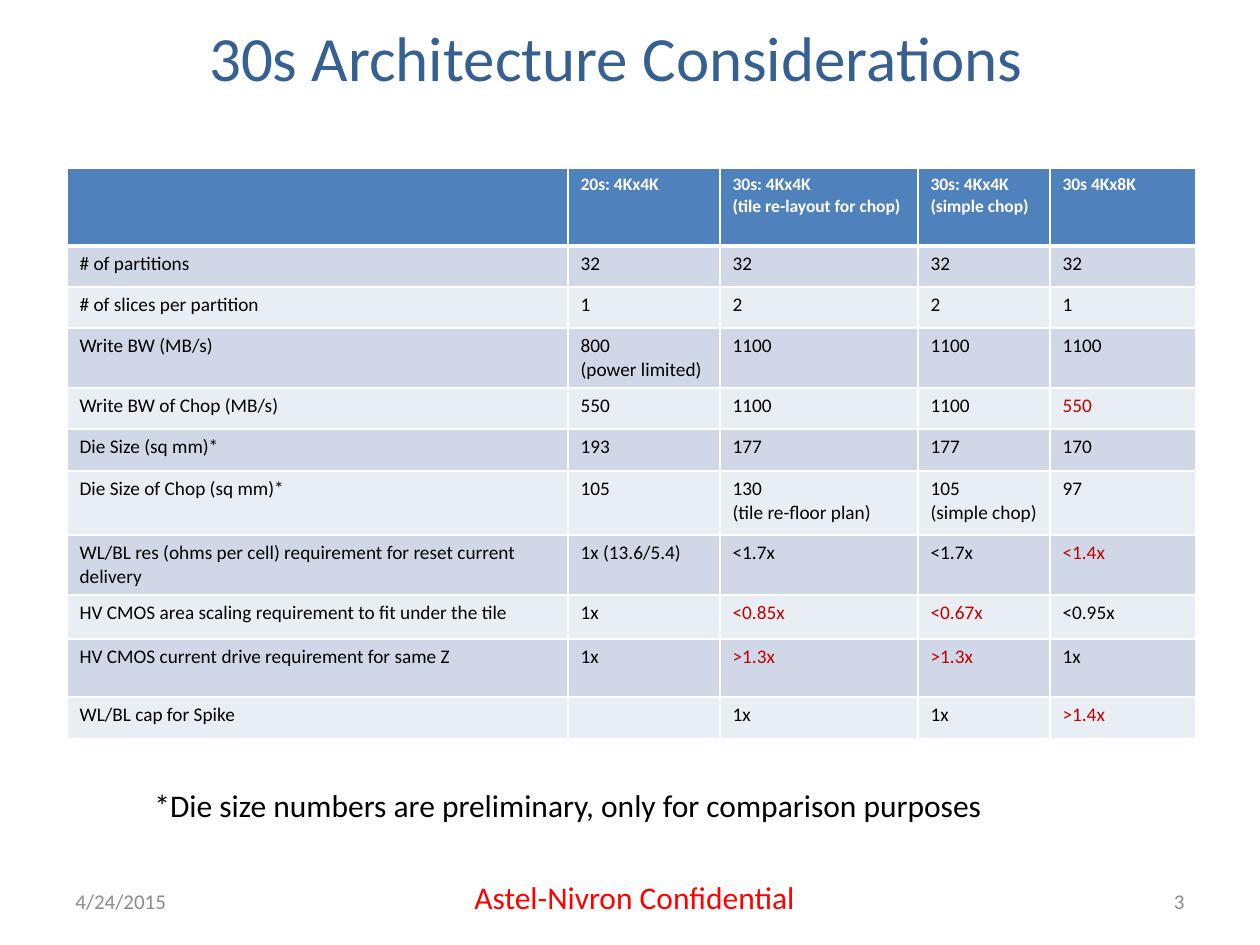
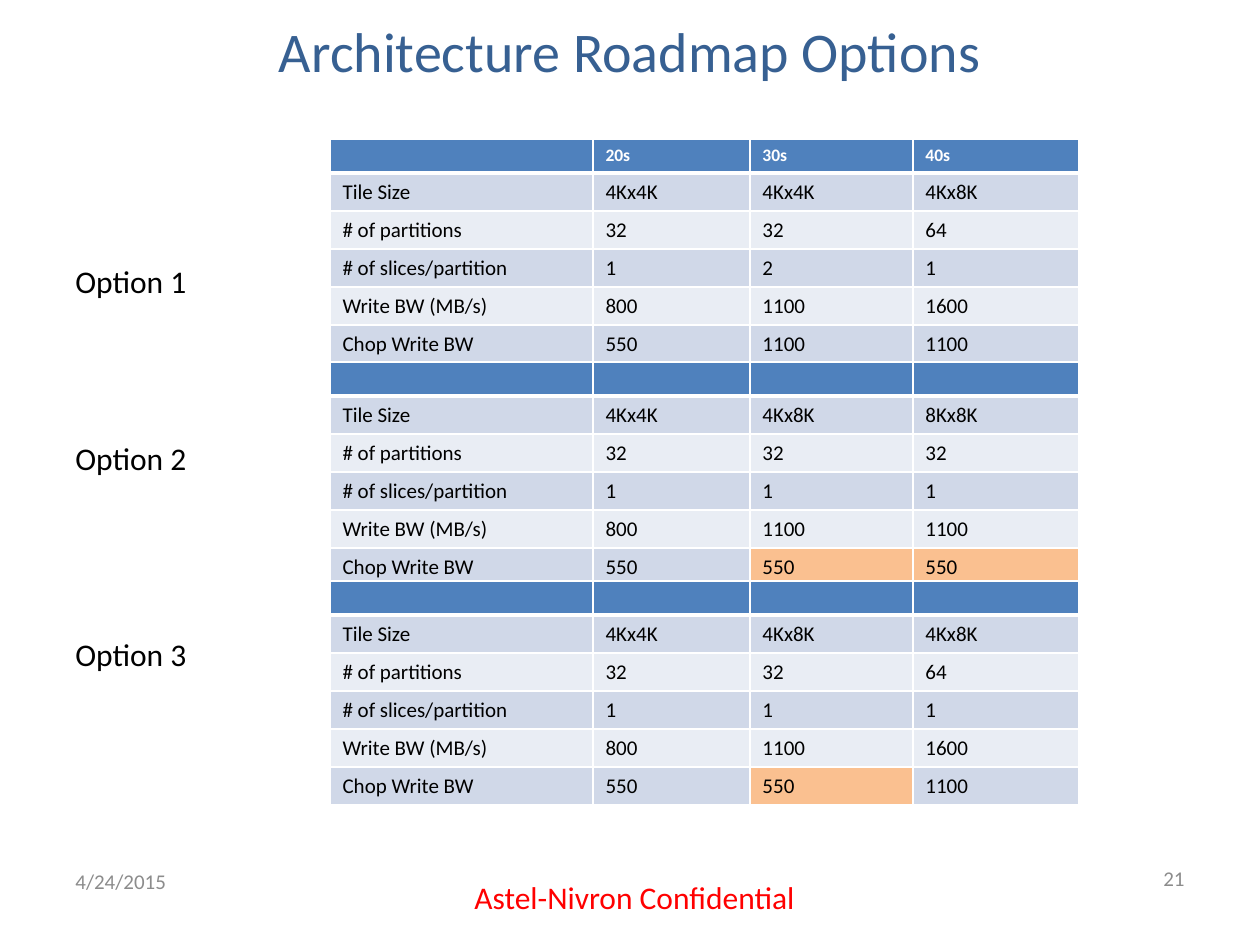
from itertools import product

from lxml.etree import SubElement
from pptx import Presentation
from pptx.dml.color import RGBColor
from pptx.enum.text import MSO_ANCHOR as Anchor, MSO_AUTO_SIZE as AutoSize, PP_ALIGN as Align
from pptx.oxml.ns import qn
from pptx.util import Pt

PX = 914400 // 126
FONT = "Calibri"
TITLE, BLACK, WHITE, GREY = "376092", "000000", "FFFFFF", "8C8C8C"
HEADER, BANDS = "4F81BD", ("E9EDF4", "D0D8E8")
WARNING, HIGHLIGHT, CONFIDENTIAL = "C00000", "FAC090", "FF0000"

CONSIDERATIONS = [
    ("", "20s: 4Kx4K", "30s: 4Kx4K\n(tile re-layout for chop)", "30s: 4Kx4K\n(simple chop)", "30s 4Kx8K"),
    ("# of partitions", "32", "32", "32", "32"),
    ("# of slices per partition", "1", "2", "2", "1"),
    ("Write BW (MB/s)", "800\n(power limited)", "1100", "1100", "1100"),
    ("Write BW of Chop (MB/s)", "550", "1100", "1100", "550"),
    ("Die Size (sq mm)*", "193", "177", "177", "170"),
    ("Die Size of Chop (sq mm)*", "105", "130\n(tile re-floor plan)", "105\n(simple chop)", "97"),
    ("WL/BL res (ohms per cell) requirement for reset current delivery",
     "1x (13.6/5.4)", "<1.7x", "<1.7x", "<1.4x"),
    ("HV CMOS area scaling requirement to fit under the tile", "1x", "<0.85x", "<0.67x", "<0.95x"),
    ("HV CMOS current drive requirement for same Z", "1x", ">1.3x", ">1.3x", "1x"),
    ("WL/BL cap for Spike", "", "1x", "1x", ">1.4x"),
]
CONSIDERATION_WIDTHS = (501, 152, 198, 132, 146)
CONSIDERATION_HEIGHTS = (78, 41, 41, 60, 41, 42, 64, 60, 44, 58, 42)
CONSIDERATION_WARNINGS = {(4, 4), (7, 4), (8, 2), (8, 3), (9, 2), (9, 3), (10, 4)}

ROADMAP_LABELS = ("Tile Size", "# of partitions", "# of slices/partition", "Write BW (MB/s)", "Chop Write BW")
ROADMAP_WIDTHS = (263, 157, 163, 166)
ROADMAP_HEIGHTS = (34,) + (38,) * len(ROADMAP_LABELS)
GENERATION_20S = ("4Kx4K", "32", "1", "800", "550")
GENERATION_4KX8K = ("4Kx8K", "32", "1", "1100", "550")
GENERATION_64 = ("4Kx8K", "64", "1", "1600", "1100")
ROADMAP_OPTIONS = [
    (139, 256, ("", "20s", "30s", "40s"),
     (("4Kx4K", "32", "2", "1100", "1100"), GENERATION_64), set()),
    (362, 433, ("",) * 4,
     (GENERATION_4KX8K, ("8Kx8K", "32", "1", "1100", "550")), {(5, 2), (5, 3)}),
    (581, 629, ("",) * 4, (GENERATION_4KX8K, GENERATION_64), {(5, 2)}),
]


def rgb(value):
    """Turn a hex string into a colour."""
    return RGBColor.from_string(value)


def write(frame, text, size=18, color=BLACK, bold=False, align=Align.LEFT):
    """Fill a text frame, one paragraph per line, in one format."""
    frame.text = text
    for paragraph in frame.paragraphs:
        paragraph.alignment = align
        for run in paragraph.runs:
            run.font.name, run.font.size, run.font.bold = FONT, Pt(size), bold
            run.font.color.rgb = rgb(color)
        if not paragraph.runs:
            SubElement(paragraph._p, qn("a:endParaRPr"), sz=str(size * 100))


def place(shape, left, top, width, height):
    """Position a shape in px."""
    shape.left, shape.top, shape.width, shape.height = (n * PX for n in (left, top, width, height))


def add_label(slide, text, box, wrap=True, anchor=Anchor.TOP, **style):
    """Add a text box."""
    label = slide.shapes.add_textbox(*(n * PX for n in box))
    label.text_frame.word_wrap = wrap
    label.text_frame.vertical_anchor = anchor
    write(label.text_frame, text, **style)


def add_border(cell, side, width):
    """Draw one white edge of a cell."""
    line = SubElement(cell._tc.get_or_add_tcPr(), qn(f"a:ln{side}"), w=str(Pt(width)))
    SubElement(SubElement(line, qn("a:solidFill")), qn("a:srgbClr"), val=WHITE)


def add_grid(slide, rows, left, top, widths, heights, size, warnings=(), highlights=()):
    """Add a banded table with a blue header row."""
    box = (left, top, sum(widths), sum(heights))
    table = slide.shapes.add_table(len(rows), len(widths), *(n * PX for n in box)).table
    for column, width in zip(table.columns, widths):
        column.width = width * PX
    for row, height in zip(table.rows, heights):
        row.height = height * PX
    for r, c in product(range(len(rows)), range(len(widths))):
        cell = table.cell(r, c)
        for side in "LRTB":
            under_header = (r, side) in ((0, "B"), (1, "T"))
            add_border(cell, side, 3 if under_header else 1)
        cell.fill.solid()
        if r == 0:
            cell.fill.fore_color.rgb = rgb(HEADER)
            write(cell.text_frame, rows[r][c], size=10, color=WHITE, bold=True)
        else:
            cell.fill.fore_color.rgb = rgb(HIGHLIGHT if (r, c) in highlights else BANDS[r % 2])
            write(cell.text_frame, rows[r][c], size=size, color=WARNING if (r, c) in warnings else BLACK)


def add_page(deck, title, title_box, title_size, number, date_top, number_top):
    """Add a slide with its title, confidentiality mark, date and number."""
    slide = deck.slides.add_slide(deck.slide_layouts[5])
    heading = slide.shapes.title
    place(heading, *title_box)
    frame = heading.text_frame
    frame.auto_size, frame.word_wrap, frame.vertical_anchor = AutoSize.NONE, True, Anchor.MIDDLE
    write(frame, title, size=title_size, color=TITLE, align=Align.CENTER)
    add_label(slide, "Astel-Nivron Confidential", (462, 872, 349, 50), wrap=False, color=CONFIDENTIAL)
    small = {"size": 12, "color": GREY, "anchor": Anchor.MIDDLE}
    add_label(slide, "4/24/2015", (63, date_top, 294, 50), **small)
    add_label(slide, number, (903, number_top, 294, 50), align=Align.RIGHT, **small)
    return slide


def add_considerations(deck):
    """Build the comparison of 30s architectures."""
    slide = add_page(deck, "30s Architecture Considerations", (49, 34, 1134, 44), 36, "3", 876, 876)
    add_grid(slide, CONSIDERATIONS, 67, 168, CONSIDERATION_WIDTHS, CONSIDERATION_HEIGHTS, 11,
             warnings=CONSIDERATION_WARNINGS)
    add_label(slide, "*Die size numbers are preliminary, only for comparison purposes", (142, 780, 977, 50))


def add_roadmap(deck):
    """Build the three roadmap options."""
    slide = add_page(deck, "Architecture Roadmap Options", (63, 28, 1134, 44), 32, "21", 856, 853)
    for number, (top, label_top, header, later, highlights) in enumerate(ROADMAP_OPTIONS, 1):
        rows = [header, *zip(ROADMAP_LABELS, GENERATION_20S, *later)]
        add_grid(slide, rows, 330, top, ROADMAP_WIDTHS, ROADMAP_HEIGHTS, 12, highlights=highlights)
        add_label(slide, f"Option {number}", (63, label_top, 212, 50))


def main():
    """Build and save the deck."""
    deck = Presentation()
    deck.slide_width, deck.slide_height = 1260 * PX, 945 * PX
    add_considerations(deck)
    add_roadmap(deck)
    deck.save("out.pptx")


if __name__ == "__main__":
    main()
